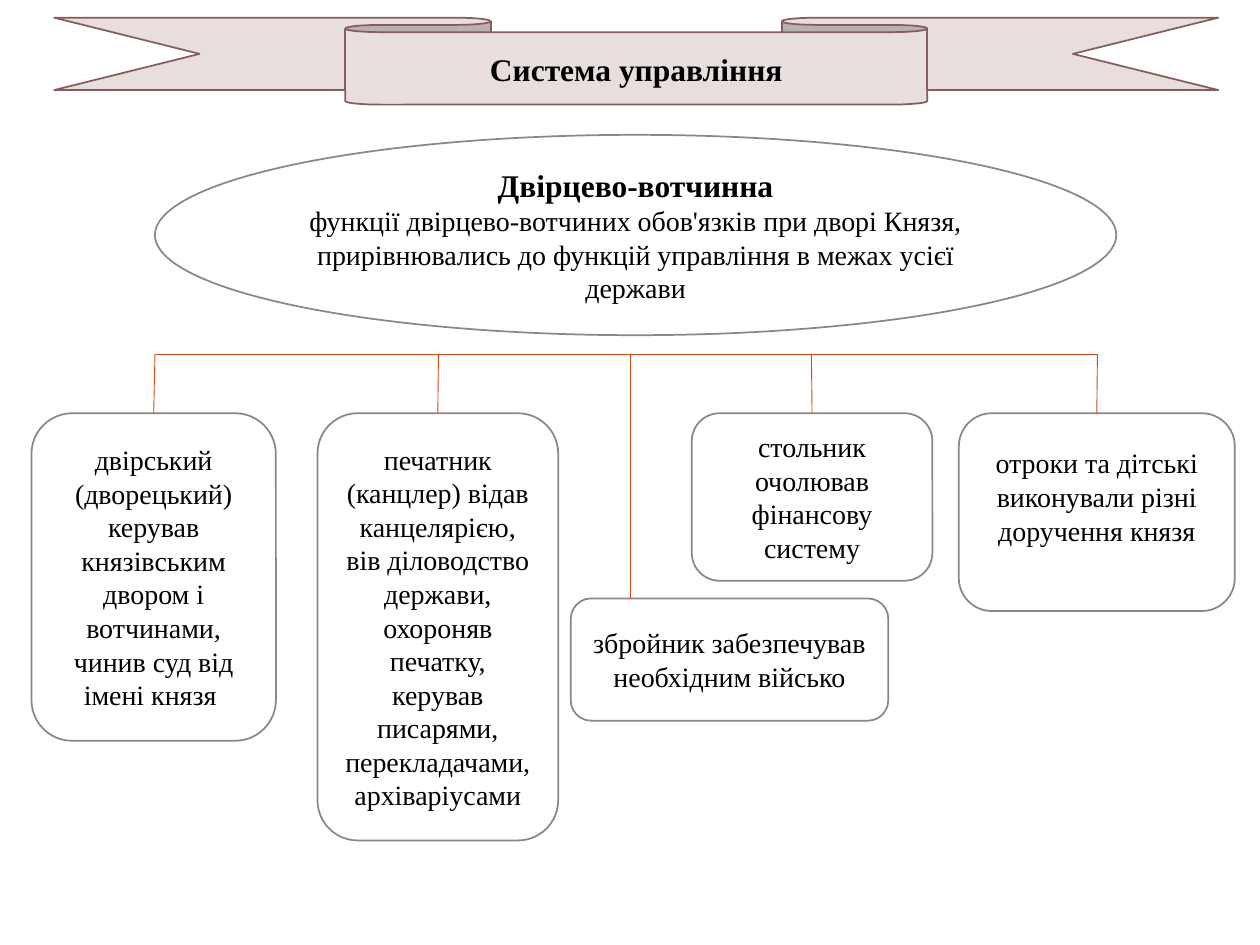
from pptx import Presentation
from pptx.dml.color import RGBColor
from pptx.enum.shapes import MSO_CONNECTOR, MSO_SHAPE
from pptx.enum.text import MSO_ANCHOR, PP_ALIGN
from pptx.oxml.ns import qn
from pptx.util import Inches, Pt
from lxml.etree import SubElement

COLORS = {"ribbon": "E8DEDE", "edge": "855D5D", "white": "FFFFFF",
          "rim": "918485", "rail": "D34817", "text": "000000"}


class Chart:
    """Draws the styled elements of an organisation chart on one slide."""

    font = "Times New Roman"

    def __init__(self, slide):
        self.slide = slide

    def color(self, name):
        return RGBColor.from_string(COLORS[name])

    def label(self, shape, lines, heads=0):
        frame = shape.text_frame
        frame.text = "\n".join(lines)
        frame.word_wrap = True
        frame.vertical_anchor = MSO_ANCHOR.MIDDLE
        for i, para in enumerate(frame.paragraphs):
            para.alignment = PP_ALIGN.CENTER
            for run in para.runs:
                run.font.name = self.font
                run.font.size = Pt(18 if i < heads else 16)
                run.font.bold = i < heads
                run.font.color.rgb = self.color("text")

    def title(self, text, *area):
        shape = self.slide.shapes.title
        shape.left, shape.top, shape.width, shape.height = map(Inches, area)
        self.label(shape, [text], heads=1)

    def shape(self, kind, *area, fill="white", line="rim"):
        shape = self.slide.shapes.add_shape(kind, *map(Inches, area))
        shape.shadow.inherit = False
        shape.fill.solid()
        shape.fill.fore_color.rgb = self.color(fill)
        shape.line.color.rgb = self.color(line)
        shape.line.width = Pt(1)
        return shape

    def box(self, text, *area):
        shape = self.shape(MSO_SHAPE.ROUNDED_RECTANGLE, *area)
        self.label(shape, [text])
        return shape

    def line(self, x1, y1, x2, y2, box=None):
        line = self.slide.shapes.add_connector(
            MSO_CONNECTOR.STRAIGHT, *map(Inches, (x1, y1, x2, y2)))
        line.line.color.rgb = self.color("rail")
        line.line.width = Pt(0.5)
        SubElement(line._element.spPr, qn("a:effectLst"))
        if box is not None:
            line.end_connect(box, 0)


def main():
    deck = Presentation()
    deck.slide_width, deck.slide_height = Inches(10), Inches(7.5)
    chart = Chart(deck.slides.add_slide(deck.slide_layouts[5]))

    ribbon = chart.shape(MSO_SHAPE.DOWN_RIBBON, 0.43, 0.14, 9.24, 0.69,
                         fill="ribbon", line="edge")
    tree = chart.slide.shapes._spTree
    tree.remove(ribbon._element)
    tree.insert(2, ribbon._element)
    chart.title("Система управління", 2.74, 0.26, 4.62, 0.57)

    oval = chart.shape(MSO_SHAPE.OVAL, 1.23, 1.07, 7.63, 1.59)
    chart.label(oval, [
        "Двірцево-вотчинна",
        "функції двірцево-вотчиних обов'язків при дворі Князя, "
        "прирівнювались до функцій управління в межах усієї держави"], heads=1)

    top, rail = 3.28, 2.81
    roles = [
        ("двірський (дворецький) керував князівським двором і вотчинами, "
         "чинив суд від імені князя ", 0.25, 1.94, 2.6, 1.23),
        ("печатник (канцлер) відав канцелярією, вів діловодство держави, "
         "охороняв печатку, керував писарями, перекладачами, архіваріусами",
         2.52, 1.91, 3.39, 3.48),
        ("стольник очолював фінансову систему", 5.49, 1.91, 1.33, 6.44),
        ("отроки та дітські виконували різні доручення князя",
         7.61, 2.19, 1.57, 8.71),
    ]
    chart.line(1.23, rail, 8.71, rail)
    for text, left, width, height, x in roles:
        box = chart.box(text, left, top, width, height)
        chart.line(x, rail, x, top, box)
    box.text_frame.margin_bottom = Inches(0.3)

    chart.box("збройник забезпечував необхідним військо", 4.53, 4.75, 2.52, 0.97)
    chart.line(5, rail, 5, 4.75)
    deck.save("out.pptx")


if __name__ == "__main__":
    main()
